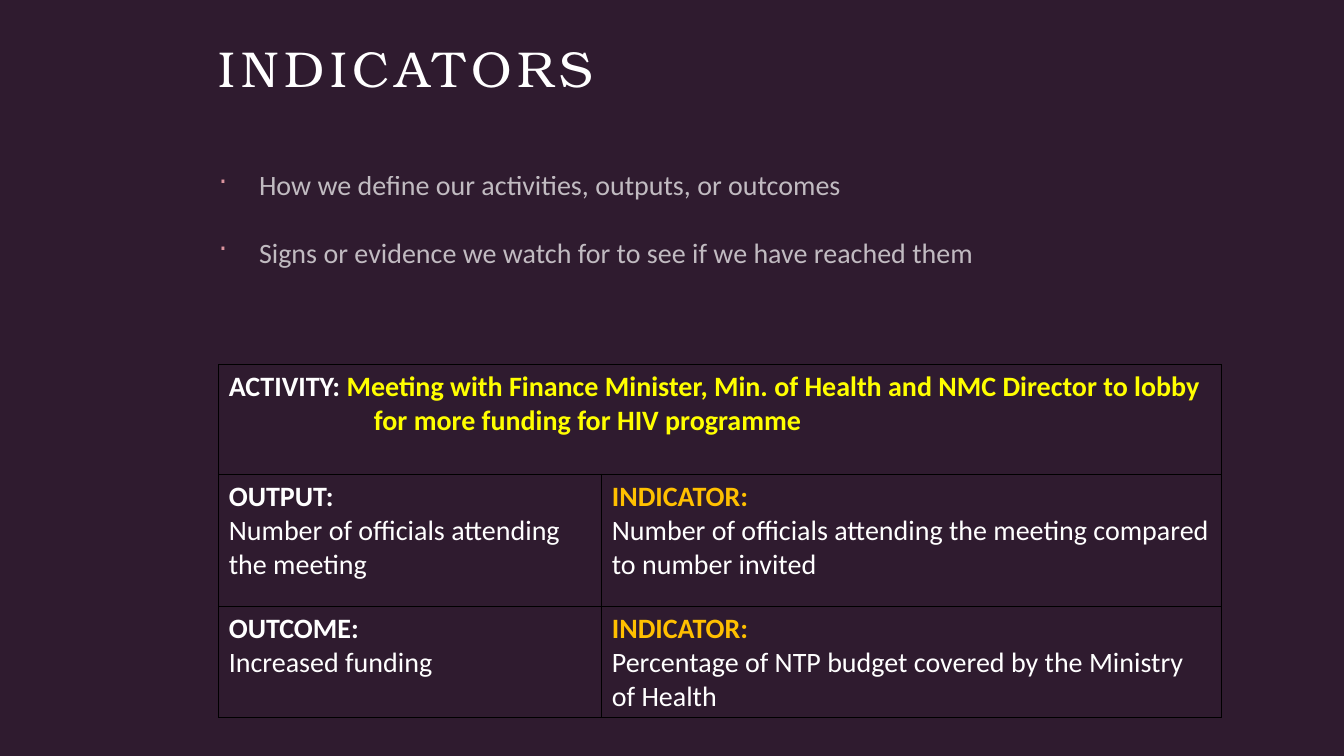
from lxml.etree import SubElement
from pptx import Presentation
from pptx.dml.color import RGBColor
from pptx.enum.text import MSO_ANCHOR
from pptx.oxml.ns import qn
from pptx.util import Pt

PLUM = RGBColor(0x2F, 0x1B, 0x2F)
WHITE = RGBColor(0xFF, 0xFF, 0xFF)
YELLOW = RGBColor(0xFF, 0xFF, 0x00)
AMBER = RGBColor(0xFF, 0xC0, 0x00)
ROSE = RGBColor(0xDB, 0x94, 0x9E)
BLACK = RGBColor(0, 0, 0)

LEFT = 156.24
COLUMNS = (273.6, 442.8)
ROWS = (78.5, 94.3, 79.2)
ACTIVITY = [
    ("ACTIVITY: ", WHITE),
    ("Meeting with Finance Minister, Min. of Health and NMC Director "
     "to lobby for more funding for HIV programme", YELLOW),
]
RESULTS = [
    [("OUTPUT:", WHITE, "Number of officials attending the meeting"),
     ("INDICATOR:", AMBER,
      "Number of officials attending the meeting compared to number invited")],
    [("OUTCOME:", WHITE, "Increased funding"),
     ("INDICATOR:", AMBER,
      "Percentage of NTP budget covered by the Ministry of Health")],
]
BULLETS = [
    "How we define our activities, outputs, or outcomes",
    "Signs or evidence we watch for to see if we have reached them",
]


def add_color(parent, color):
    fill = SubElement(parent, qn("a:solidFill"))
    return SubElement(fill, qn("a:srgbClr"), val=str(color))


def hang(p, indent):
    """Indent a paragraph and pull its first line back to the edge."""
    pPr = p._p.get_or_add_pPr()
    pPr.set("marL", str(Pt(indent)))
    pPr.set("indent", str(-Pt(indent)))
    return pPr


class SlideBuilder:
    title_font = "TeX Gyre Bonum"
    body_font = "Calibri"
    body_size = 20

    def __init__(self, slide):
        self.slide = slide
        fill = slide.background.fill
        fill.solid()
        fill.fore_color.rgb = PLUM

    def style(self, r, color=WHITE, bold=False, font=None, size=None):
        r.font.name = font or self.body_font
        r.font.size = Pt(size or self.body_size)
        r.font.bold = bold
        r.font.color.rgb = color

    def text_frame(self, left, top, width, height):
        sp = self.slide.shapes.add_textbox(Pt(left), Pt(top), Pt(width), Pt(height))
        tf = sp.text_frame
        tf.word_wrap = True
        tf.margin_left = tf.margin_right = tf.margin_top = tf.margin_bottom = 0
        return tf

    def title(self, text, *box):
        tf = self.text_frame(*box)
        tf.vertical_anchor = MSO_ANCHOR.MIDDLE
        tf.text = text
        r = tf.paragraphs[0].runs[0]
        self.style(r, font=self.title_font, size=36)
        r.font._element.set("spc", "400")

    def bullets(self, items, *box):
        tf = self.text_frame(*box)
        tf.text = "\n".join(items)
        for p in tf.paragraphs:
            p.line_spacing = 1.25
            p.space_before = Pt(18)
            pPr = hang(p, 28.8)
            bullet_color = SubElement(pPr, qn("a:buClr"))
            SubElement(bullet_color, qn("a:srgbClr"), val=str(ROSE))
            SubElement(pPr, qn("a:buChar"), char="·")
            r = p.runs[0]
            self.style(r)
            color = r.font._element.find(".//" + qn("a:srgbClr"))
            SubElement(color, qn("a:alpha"), val="70000")

    def table(self, left, top, columns, rows):
        frame = self.slide.shapes.add_table(
            len(rows), len(columns), Pt(left), Pt(top), Pt(sum(columns)), Pt(sum(rows)))
        table = frame.table
        table.first_row = table.horz_banding = False
        for column, width in zip(table.columns, columns):
            column.width = Pt(width)
        for row, height in zip(table.rows, rows):
            row.height = Pt(height)
        for cell in table.iter_cells():
            cell.margin_left = cell.margin_right = Pt(7.2)
            cell.margin_top = cell.margin_bottom = Pt(3.6)
            tcPr = cell._tc.get_or_add_tcPr()
            for side in ("a:lnL", "a:lnR", "a:lnT", "a:lnB"):
                add_color(SubElement(tcPr, qn(side), w=str(Pt(1))), BLACK)
            cell.fill.background()
        return table

    def activity_cell(self, cell, parts):
        p = cell.text_frame.paragraphs[0]
        hang(p, 103.68)
        for text, color in parts:
            r = p.add_run()
            r.text = text
            self.style(r, color, bold=True)

    def result_cell(self, cell, label, color, text):
        tf = cell.text_frame
        tf.text = f"{label}\n{text}"
        heading, detail = tf.paragraphs
        self.style(heading.runs[0], color, bold=True)
        self.style(detail.runs[0])


def main():
    prs = Presentation()
    prs.slide_width, prs.slide_height = Pt(960), Pt(540)
    page = SlideBuilder(prs.slides.add_slide(prs.slide_layouts[6]))
    page.title("INDICATORS", LEFT, 24, 612, 48)
    page.bullets(BULLETS, LEFT, 114, 684, 114)

    table = page.table(LEFT, 260.5, COLUMNS, ROWS)
    table.cell(0, 0).merge(table.cell(0, 1))
    page.activity_cell(table.cell(0, 0), ACTIVITY)
    for row, results in enumerate(RESULTS, 1):
        for col, result in enumerate(results):
            page.result_cell(table.cell(row, col), *result)
    prs.save("out.pptx")


if __name__ == "__main__":
    main()
